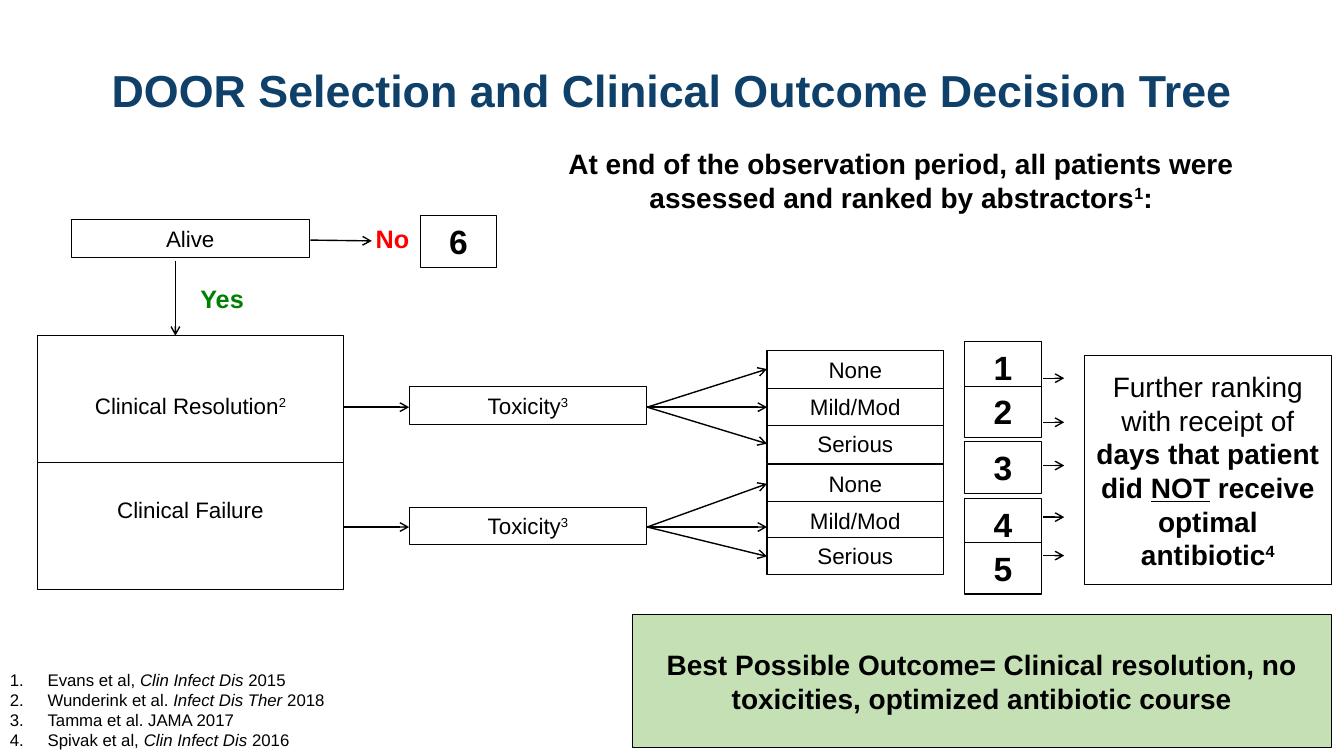
from dataclasses import dataclass

from lxml import etree
from pptx import Presentation
from pptx import util as u
from pptx.dml.color import RGBColor
from pptx.enum import shapes, text
from pptx.oxml import ns


@dataclass(frozen=True)
class Theme:
    face: str = "Arial"
    ink: str = "000000"
    paper: str = "FFFFFF"
    navy: str = "0F406A"
    red: str = "FF0000"
    green: str = "008000"
    mint: str = "C5E0B4"
    note: int = 12
    label: int = 16
    answer: int = 18
    body: int = 20
    rank: int = 24
    title: int = 32
    edge: float = 0.75
    wire: float = 1


BOLD = {"bold": True}
SLANT = {"italic": True}
RAISED = {"raised": True}
MID = text.MSO_ANCHOR.MIDDLE
LEFT = text.PP_ALIGN.LEFT


class Canvas:
    def __init__(self, slide, theme):
        self.slide, self.theme = slide, theme

    def letter(self, shape, paras, size, color=None, align=text.PP_ALIGN.CENTER,
               anchor=text.MSO_ANCHOR.TOP, top=0.13, gap=0, lines=None,
               listed=False, **look):
        """Fill a shape; each paragraph is a string or a list of (words, format)."""
        frame = shape.text_frame
        values = {"word_wrap": True, "vertical_anchor": anchor, "margin_top": u.Cm(top)}
        for name, value in values.items():
            setattr(frame, name, value)
        for index, runs in enumerate(paras):
            para = frame.paragraphs[0] if index == 0 else frame.add_paragraph()
            para.alignment = align
            if lines:
                para.line_spacing = lines
            if index and gap:
                para.space_before = u.Pt(gap)
            if listed:
                self.number(para)
            for words, extra in [(runs, {})] if isinstance(runs, str) else runs:
                run = para.add_run()
                run.text = words
                style = {"name": self.theme.face, "size": u.Pt(size), **look, **extra}
                if style.pop("raised", False):
                    run._r.get_or_add_rPr().set("baseline", "30000")
                for name, value in style.items():
                    setattr(run.font, name, value)
                run.font.color.rgb = RGBColor.from_string(color or self.theme.ink)

    def number(self, para):
        props = para._p.get_or_add_pPr()
        indent = u.Cm(0.95)
        props.set("marL", str(indent))
        props.set("indent", str(-indent))
        etree.SubElement(props, ns.qn("a:buFont"), typeface="+mj-lt")
        etree.SubElement(props, ns.qn("a:buAutoNum"), type="arabicPeriod")

    def label(self, place, paras, size, **look):
        box = self.slide.shapes.add_textbox(*map(u.Cm, place))
        self.letter(box, paras, size, **look)

    def box(self, place, paras, size, fill=None, **look):
        box = self.slide.shapes.add_shape(
            shapes.MSO_SHAPE.RECTANGLE, *map(u.Cm, place))
        box.shadow.inherit = False
        box.fill.solid()
        box.fill.fore_color.rgb = RGBColor.from_string(fill or self.theme.paper)
        self.stroke(box.line, self.theme.edge)
        self.letter(box, paras, size, **look)

    def stroke(self, line, width):
        line.width = u.Pt(width)
        line.color.rgb = RGBColor.from_string(self.theme.ink)

    def line(self, start, end, arrow=True):
        line = self.slide.shapes.add_connector(
            shapes.MSO_CONNECTOR.STRAIGHT, *map(u.Cm, start + end))
        self.stroke(line.line, self.theme.wire)
        if arrow:
            etree.SubElement(line.line._get_or_add_ln(), ns.qn("a:tailEnd"), type="arrow")
        etree.SubElement(line._element.spPr, ns.qn("a:effectLst"))


def draw_tree(art):
    look = art.theme
    art.box((1.8, 5.54, 5.99, 0.95), ["Alive"], look.label)
    art.box((0.94, 8.46, 7.72, 6.4),
            [[("Clinical Resolution", {}), ("2", RAISED)], "Clinical Failure"],
            look.label, top=1.42, gap=55)
    art.line((0.94, 11.66), (8.66, 11.66), arrow=False)
    art.line((7.82, 6.05), (9.37, 6.07))
    art.line((4.42, 6.58), (4.42, 8.46))
    art.label((9.22, 5.51, 1.7, 1.02), ["No"], look.answer,
              color=look.red, align=LEFT, bold=True)
    art.label((4.8, 7.01, 2.95, 1.02), ["Yes"], look.answer,
              color=look.green, align=LEFT, bold=True)

    branches = [
        (10.26, 9.75, (9.3, 10.26, 11.18), (8.84, 9.78, 10.72)),
        (13.28, 12.78, (12.19, 13.28, 14.02), (11.71, 12.65, 13.54)),
    ]
    for mid, top, tips, rows in branches:
        art.line((8.66, mid), (10.31, mid))
        art.box((10.31, top, 5.99, 0.95),
                [[("Toxicity", {}), ("3", RAISED)]], look.label)
        for grade, tip, row in zip(("None", "Mild/Mod", "Serious"), tips, rows):
            art.line((16.31, mid), (19.33, tip))
            art.box((19.33, row, 4.45, 0.95), [grade], look.label)


def draw_ranks(art):
    places = [(24.31, y) for y in (8.61, 9.73, 11.13, 12.57, 13.67)] + [(10.59, 5.44)]
    for rank, place in enumerate(places, 1):
        art.box(place + (1.93, 1.3), [str(rank)], art.theme.rank, bold=True)
    for y in (9.53, 10.64, 11.73, 13.03, 14):
        art.line((26.29, y), (26.82, y))


def draw_text(art):
    look = art.theme
    art.label((1.22, 0.76, 31.45, 3.18),
              ["DOOR Selection and Clinical Outcome Decision Tree"], look.title,
              color=look.navy, anchor=MID, lines=0.9, bold=True)
    art.label((13.16, 3.56, 19.1, 1.96),
              [[("At end of the observation period, all patients were "
                 "assessed and ranked by abstractors", {}), ("1", RAISED), (":", {})]],
              look.body, bold=True)
    art.box((27.33, 8.97, 6.22, 5.77),
            [[("Further ranking with receipt of ", {}),
              ("days that patient did ", BOLD), ("NOT", {**BOLD, "underline": True}),
              (" receive optimal antibiotic", BOLD), ("4", {**BOLD, **RAISED})]],
            look.body, anchor=MID)
    art.box((15.93, 15.49, 17.63, 3.35),
            ["Best Possible Outcome= Clinical resolution, no toxicities, "
             "optimized antibiotic course"],
            look.body, fill=look.mint, anchor=MID, bold=True)
    art.label((0, 16.74, 9.5, 2.31),
              [[("Evans et al, ", {}), ("Clin Infect Dis ", SLANT), ("2015", {})],
               [("Wunderink et al. ", {}), ("Infect Dis Ther ", SLANT), ("2018", {})],
               "Tamma et al. JAMA 2017",
               [("Spivak et al, ", {}), ("Clin Infect Dis ", SLANT), ("2016", {})]],
              look.note, align=LEFT, listed=True)


def main():
    deck = Presentation()
    deck.slide_width, deck.slide_height = u.Cm(33.87), u.Cm(19.05)
    art = Canvas(deck.slides.add_slide(deck.slide_layouts[6]), Theme())
    draw_tree(art)
    draw_ranks(art)
    draw_text(art)
    deck.save("out.pptx")


if __name__ == "__main__":
    main()
